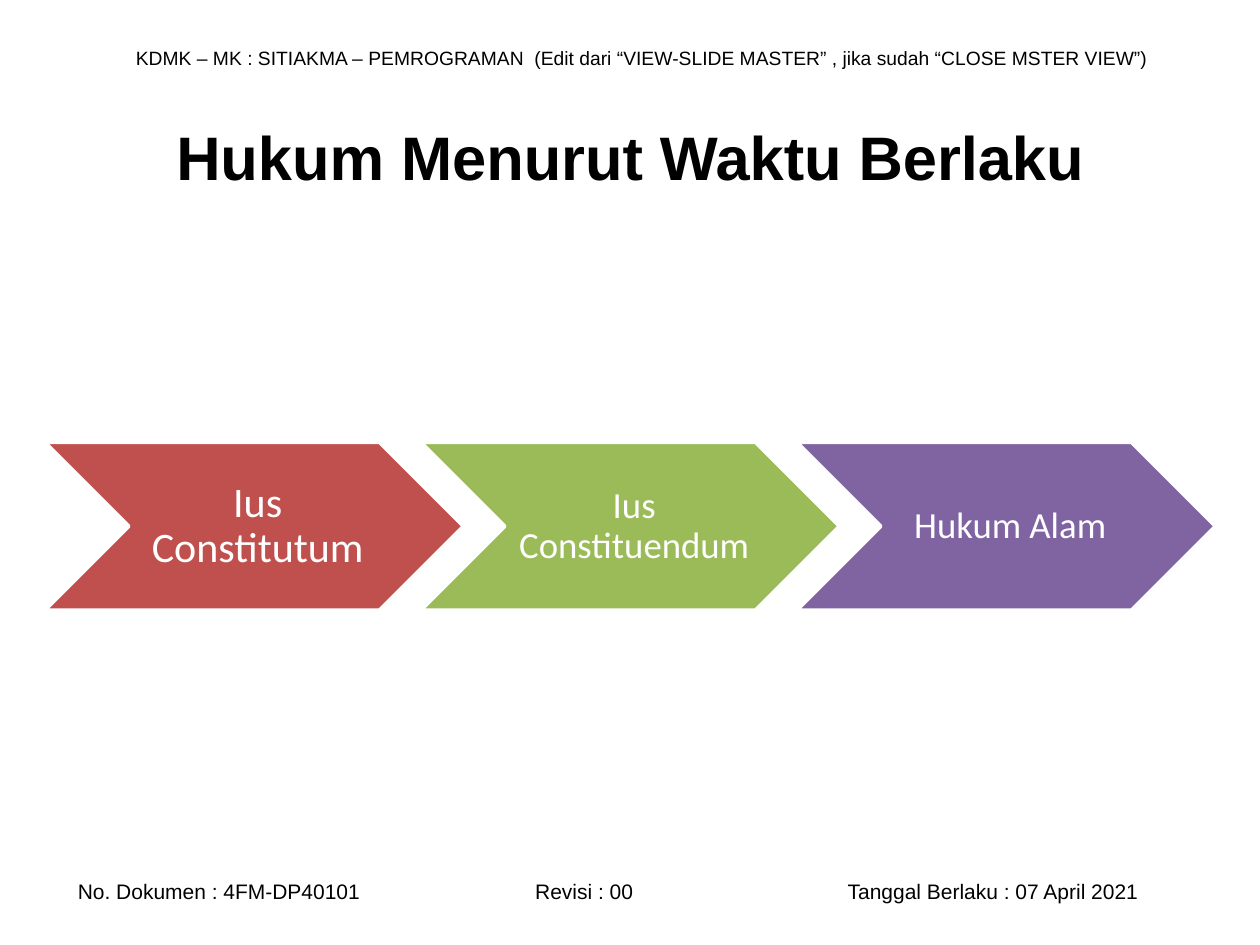
from dataclasses import dataclass

from lxml import etree
from pptx import Presentation
from pptx.dml.color import RGBColor
from pptx.enum.shapes import MSO_SHAPE
from pptx.enum.text import MSO_ANCHOR, PP_ALIGN
from pptx.oxml.ns import qn
from pptx.slide import Slide
from pptx.text.text import TextFrame
from pptx.util import Cm, Pt

CHEVRON = MSO_SHAPE.CHEVRON
MIDDLE = MSO_ANCHOR.MIDDLE
CENTER, JUSTIFY = PP_ALIGN.CENTER, PP_ALIGN.JUSTIFY


@dataclass(frozen=True)
class Theme:
    black: str = "000000"
    white: str = "FFFFFF"
    red: str = "C0504D"
    green: str = "9BBB59"
    purple: str = "8064A2"
    base_font: str = "Arial"
    step_font: str = "Calibri"
    header_size: float = 11
    footer_size: float = 12
    title_size: float = 35.1
    step_large: float = 24
    step_small: float = 21
    outline: float = 2


@dataclass(frozen=True)
class Label:
    text: str
    left: float
    top: float
    width: float
    height: float
    size: float
    align: PP_ALIGN
    bold: bool = False
    tabs: tuple[float, ...] = ()


@dataclass(frozen=True)
class Step:
    text: str
    fill: str
    size: float
    inset: float


THEME = Theme()

LABELS = (
    Label(
        "KDMK – MK : SITIAKMA – PEMROGRAMAN  (Edit dari “VIEW-SLIDE MASTER” , "
        "jika sudah “CLOSE MSTER VIEW”)",
        2.49, 0.79, 21.21, 0.74, THEME.header_size, JUSTIFY,
    ),
    Label(
        "No. Dokumen : 4FM-DP40101\tRevisi : 00\tTanggal Berlaku : 07 April 2021",
        1.32, 17.58, 23.19, 0.76, THEME.footer_size, JUSTIFY, tabs=(9.22, 15.52),
    ),
    Label(
        "Hukum Menurut Waktu Berlaku",
        1.27, 1.55, 22.86, 3.18, THEME.title_size, CENTER, bold=True,
    ),
)

STEPS = (
    Step("Ius Constitutum", THEME.red, THEME.step_large, 0.1),
    Step("Ius Constituendum", THEME.green, THEME.step_small, 0.08),
    Step("Hukum Alam", THEME.purple, THEME.step_small, 0.08),
)
STEP_LEFT, STEP_TOP = 0.91, 8.92
STEP_WIDTH, STEP_HEIGHT = 8.43, 3.38
STEP_PITCH = 7.58


def write(tf: TextFrame, text: str, font: str, size: float, color: str,
          align: PP_ALIGN, bold: bool = False, tabs: tuple[float, ...] = ()) -> None:
    tf.word_wrap = True
    tf.vertical_anchor = MIDDLE
    p = tf.paragraphs[0]
    p.alignment = align
    if tabs:
        tab_list = etree.SubElement(p._p.get_or_add_pPr(), qn("a:tabLst"))
        for pos in tabs:
            etree.SubElement(tab_list, qn("a:tab"), pos=str(Cm(pos)), algn="l")
    r = p.add_run()
    r.text = text
    r.font.name = font
    r.font.size = Pt(size)
    r.font.bold = bold
    r.font.color.rgb = RGBColor.from_string(color)


def add_label(s: Slide, label: Label) -> None:
    sp = s.shapes.add_textbox(
        Cm(label.left), Cm(label.top), Cm(label.width), Cm(label.height)
    )
    write(sp.text_frame, label.text, THEME.base_font, label.size, THEME.black,
          label.align, label.bold, label.tabs)


def add_step(s: Slide, step: Step, left: float) -> None:
    sp = s.shapes.add_shape(
        CHEVRON, Cm(left), Cm(STEP_TOP), Cm(STEP_WIDTH), Cm(STEP_HEIGHT)
    )
    sp.shadow.inherit = False
    sp.fill.solid()
    sp.fill.fore_color.rgb = RGBColor.from_string(step.fill)
    sp.line.color.rgb = RGBColor.from_string(THEME.white)
    sp.line.width = Pt(THEME.outline)
    tf = sp.text_frame
    tf.margin_left = Cm(0.24)
    tf.margin_top = tf.margin_right = tf.margin_bottom = Cm(step.inset)
    write(tf, step.text, THEME.step_font, step.size, THEME.white, CENTER)
    tf.paragraphs[0].line_spacing = 0.9


def main() -> None:
    prs = Presentation()
    prs.slide_width, prs.slide_height = Cm(25.4), Cm(19.05)
    s = prs.slides.add_slide(prs.slide_layouts[6])
    for label in LABELS:
        add_label(s, label)
    for i, step in enumerate(STEPS):
        add_step(s, step, STEP_LEFT + i * STEP_PITCH)
    prs.save("out.pptx")


if __name__ == "__main__":
    main()
